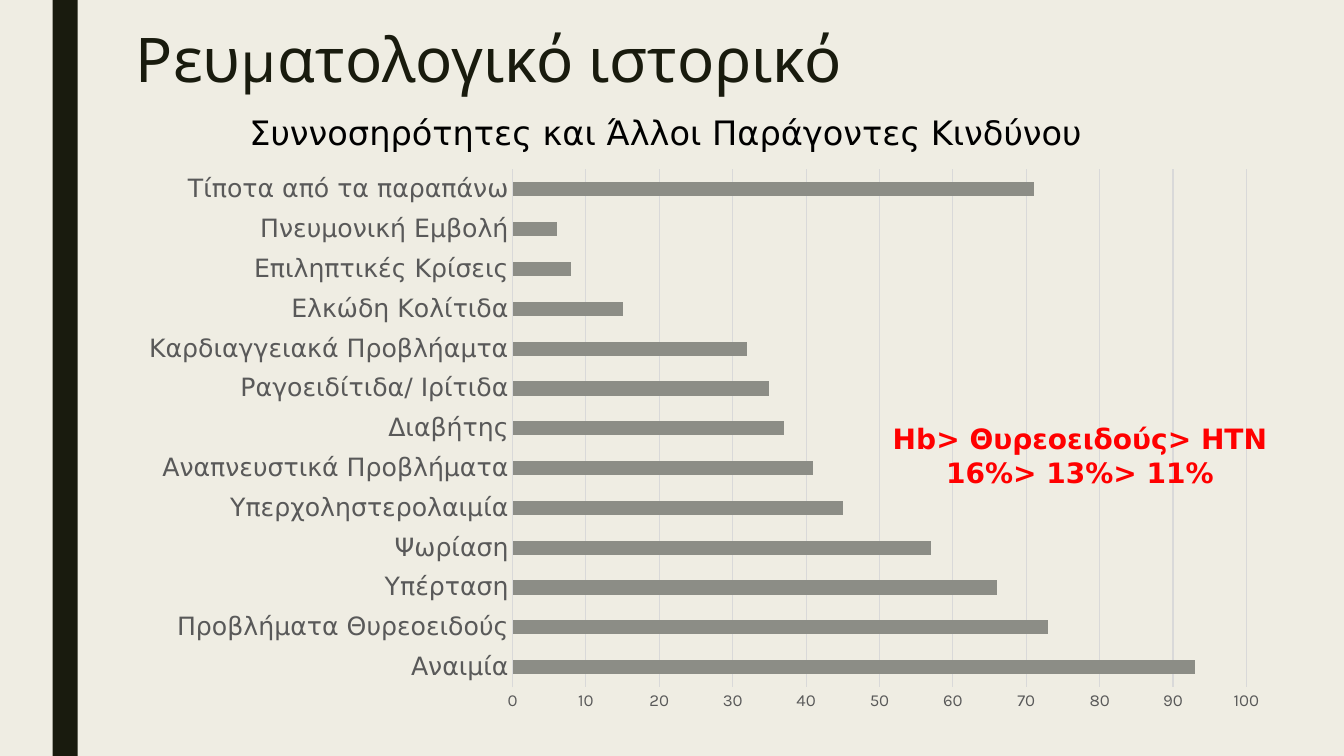
from pptx import Presentation
from pptx.chart.data import CategoryChartData
from pptx.dml.color import RGBColor
from pptx.enum.chart import XL_CHART_TYPE, XL_TICK_MARK
from pptx.enum.shapes import MSO_SHAPE
from pptx.enum.text import MSO_ANCHOR, PP_ALIGN
from pptx.util import Pt

TITLE = "Ρευματολογικό ιστορικό"
SUBTITLE = "Συννοσηρότητες και Άλλοι Παράγοντες Κινδύνου"
FINDINGS = ["Hb> Θυρεοειδoύς> HTN", "16%> 13%> 11%"]
CONDITIONS = [
    ("Αναιμία", 93),
    ("Προβλήματα Θυρεοειδούς", 73),
    ("Υπέρταση", 66),
    ("Ψωρίαση", 57),
    ("Υπερχοληστερολαιμία", 45),
    ("Αναπνευστικά Προβλήματα", 41),
    ("Διαβήτης", 37),
    ("Ραγοειδίτιδα/ Ιρίτιδα", 35),
    ("Καρδιαγγειακά Προβλήαμτα", 32),
    ("Ελκώδη Κολίτιδα", 15),
    ("Επιληπτικές Κρίσεις", 8),
    ("Πνευμονική Εμβολή", 6),
    ("Τίποτα από τα παραπάνω", 71),
]

CREAM = RGBColor(0xEF, 0xED, 0xE3)
DARK = RGBColor(0x19, 0x1B, 0x0E)
BLACK = RGBColor(0, 0, 0)
RED = RGBColor(0xFF, 0, 0)
BAR_GRAY = RGBColor(0x8C, 0x8D, 0x86)
LABEL_GRAY = RGBColor(0x59, 0x59, 0x59)
GRID_GRAY = RGBColor(0xD9, 0xD9, 0xD9)
HEADING_FONT = "Karla"
BODY_FONT = "DejaVu Sans"
BAR_CHART = XL_CHART_TYPE.BAR_CLUSTERED
NO_TICK = XL_TICK_MARK.NONE
RECTANGLE = MSO_SHAPE.RECTANGLE
TOP = MSO_ANCHOR.TOP
LEFT = PP_ALIGN.LEFT
CENTER = PP_ALIGN.CENTER

WIDTH, HEIGHT = 960, 540
MARGIN = 90


def style(font, name, size, color, bold=False):
    font.name = name
    font.size = Pt(size)
    font.color.rgb = color
    font.bold = bold


def add_text(slide, box, lines, name, size, color, align=LEFT, bold=False, spacing=None):
    frame = slide.shapes.add_textbox(*map(Pt, box)).text_frame
    frame.word_wrap = True
    frame.vertical_anchor = TOP
    for index, line in enumerate(lines):
        paragraph = frame.add_paragraph() if index else frame.paragraphs[0]
        paragraph.alignment = align
        if spacing:
            paragraph.line_spacing = spacing
        run = paragraph.add_run()
        run.text = line
        style(run.font, name, size, color, bold)


def add_conditions_chart(slide):
    data = CategoryChartData()
    data.categories = [condition for condition, _ in CONDITIONS]
    data.add_series("Series 1", [count for _, count in CONDITIONS])
    box = map(Pt, (MARGIN, 113, 826, 403))
    chart = slide.shapes.add_chart(BAR_CHART, *box, data).chart
    chart.has_legend = False
    chart.has_title = False
    style(chart.font, HEADING_FONT, 10, BLACK)

    bars = chart.plots[0]
    bars.gap_width = 182
    bars.vary_by_categories = False
    fill = bars.series[0].format.fill
    fill.solid()
    fill.fore_color.rgb = BAR_GRAY

    names, counts = chart.category_axis, chart.value_axis
    for axis, font, size in ((names, BODY_FONT, 18), (counts, HEADING_FONT, 12)):
        axis.major_tick_mark = NO_TICK
        axis.minor_tick_mark = NO_TICK
        style(axis.tick_labels.font, font, size, LABEL_GRAY)
    counts.minimum_scale = 0
    counts.maximum_scale = 100
    counts.major_unit = 10
    counts.has_major_gridlines = True
    counts.format.line.fill.background()
    for line in (names.format.line, counts.major_gridlines.format.line):
        line.color.rgb = GRID_GRAY
        line.width = Pt(0.75)


def main():
    deck = Presentation()
    deck.slide_width, deck.slide_height = Pt(WIDTH), Pt(HEIGHT)
    slide = deck.slides.add_slide(deck.slide_layouts[6])
    slide.background.fill.solid()
    slide.background.fill.fore_color.rgb = CREAM

    stripe = slide.shapes.add_shape(RECTANGLE, Pt(37.5), Pt(0), Pt(18), Pt(HEIGHT))
    stripe.shadow.inherit = False
    stripe.fill.solid()
    stripe.fill.fore_color.rgb = DARK
    stripe.line.fill.background()

    add_text(slide, (MARGIN, 18, 756, 117), [TITLE], HEADING_FONT, 44, DARK, spacing=0.89)
    add_conditions_chart(slide)
    add_text(slide, (171, 76.5, 612, 36), [SUBTITLE], BODY_FONT, 24, BLACK)
    add_text(slide, (612, 297.5, 319, 55.5), FINDINGS, BODY_FONT, 20, RED, CENTER, bold=True)
    deck.save("out.pptx")


if __name__ == "__main__":
    main()
